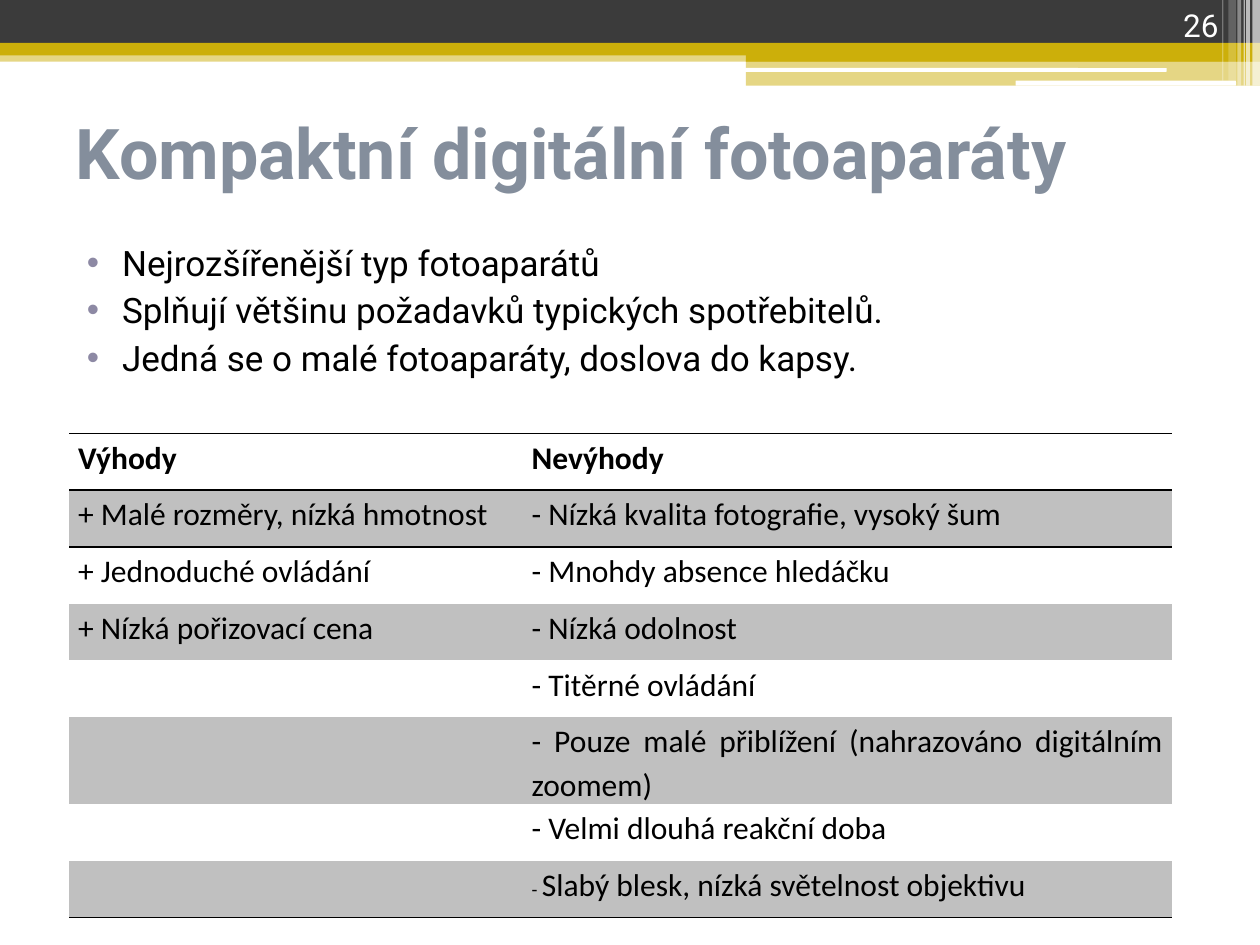
from lxml.etree import SubElement
from pptx import Presentation
from pptx.dml.color import RGBColor
from pptx.enum.shapes import MSO_SHAPE as Shape
from pptx.enum.text import MSO_ANCHOR as Anchor, MSO_AUTO_SIZE as AutoSize, PP_ALIGN as Align
from pptx.oxml import parse_xml
from pptx.oxml.ns import nsdecls, qn
from pptx.util import Inches, Pt

GOLD, DARK, WHITE, BLACK = "CCAF0A", "3B3B3B", "FFFFFF", "000000"
TITLE_GREY, BULLET, STRIPE = "848E9C", "8D89A4", "C0C0C0"
NO_STYLE = "{2D5ABB26-0587-4C30-8999-92F81FD0307C}"

# left, top, width, height, colour, opacity in percent
BANDS = [
    (0, 0.4, 10, 0.09, GOLD, 50),
    (0, 0, 10, 0.34, DARK, 100),
    (0, 0.34, 10, 0.1, GOLD, 100),
    (5.92, 0.39, 4.08, 0.1, GOLD, 100),
    (5.92, 0.48, 4.08, 0.2, GOLD, 50),
]
ROUNDED_BARS = [(5.91, 0.54, 3.35, 0.03), (8.06, 0.64, 1.75, 0.04)]
# left, width, height, opacity of the white stripes in the corner
CORNER_STRIPES = [
    (9.94, 0.06, 0.68, 65),
    (9.89, 0.03, 0.68, 65),
    (9.87, 0.01, 0.68, 60),
    (9.82, 0.03, 0.68, 40),
    (9.75, 0.06, 0.64, 20),
    (9.7, 0.01, 0.64, 30),
]
BULLETS = [
    "Nejrozšířenější typ fotoaparátů",
    "Splňují většinu požadavků typických spotřebitelů.",
    "Jedná se o malé fotoaparáty, doslova do kapsy.",
]
# each cell is a list of (text, size) runs
ROWS = [
    ([("Výhody", 18)], [("Nevýhody", 18)]),
    ([("+ Malé rozměry, nízká hmotnost", 18)], [("- Nízká kvalita fotografie, vysoký šum", 18)]),
    ([("+ Jednoduché ovládání", 18)], [("- Mnohdy absence hledáčku", 18)]),
    ([("+ Nízká pořizovací cena", 18)], [("- Nízká odolnost", 18)]),
    ([], [("- Titěrné ovládání", 18)]),
    ([], [("- Pouze malé přiblížení (nahrazováno digitálním zoomem)", 18)]),
    ([], [("- Velmi dlouhá reakční doba", 18)]),
    ([], [("- ", 11), ("Slabý blesk, nízká světelnost objektivu", 18)]),
]
COLUMN_WIDTHS = [3.6, 5.15]
ROW_HEIGHTS = [0.45] * 5 + [0.69] + [0.45] * 2


def rgb(color):
    return RGBColor.from_string(color)


def add_run(paragraph, text, size, color, font="Roboto", bold=False):
    run = paragraph.add_run()
    run.text = text
    run.font.name = font
    run.font.size = Pt(size)
    run.font.bold = bold
    run.font.color.rgb = rgb(color)


def add_bar(slide, left, top, width, height, color, opacity=100, kind=Shape.RECTANGLE):
    bar = slide.shapes.add_shape(kind, Inches(left), Inches(top), Inches(width), Inches(height))
    bar.shadow.inherit = False
    bar.line.fill.background()
    bar.fill.solid()
    bar.fill.fore_color.rgb = rgb(color)
    if opacity < 100:
        color_element = bar.fill._xPr.find(qn("a:solidFill"))[0]
        SubElement(color_element, qn("a:alpha")).set("val", str(opacity * 1000))


def add_text_box(slide, left, top, width, height, anchor):
    box = slide.shapes.add_textbox(Inches(left), Inches(top), Inches(width), Inches(height))
    box.text_frame.word_wrap = True
    box.text_frame.vertical_anchor = anchor
    return box.text_frame


def set_title(slide, text):
    title = slide.shapes.title
    title.left, title.top = Inches(0.5), Inches(0.62)
    title.width, title.height = Inches(9.34), Inches(1.17)
    title.text_frame.auto_size = AutoSize.NONE
    title.text_frame.vertical_anchor = Anchor.MIDDLE
    paragraph = title.text_frame.paragraphs[0]
    paragraph.alignment = Align.LEFT
    add_run(paragraph, text, 40, TITLE_GREY, bold=True)


def add_bullets(slide, items):
    frame = add_text_box(slide, 0.47, 1.56, 9.19, 1.8, Anchor.MIDDLE)
    for index, item in enumerate(items):
        paragraph = frame.paragraphs[0] if index == 0 else frame.add_paragraph()
        paragraph.space_before = Pt(3)
        properties = paragraph._p.get_or_add_pPr()
        properties.set("marL", str(Inches(0.4)))
        properties.set("indent", str(Inches(-0.28)))
        bullet_color = SubElement(properties, qn("a:buClr"))
        SubElement(bullet_color, qn("a:srgbClr")).set("val", BULLET)
        SubElement(properties, qn("a:buFont")).set("typeface", "Arial")
        SubElement(properties, qn("a:buChar")).set("char", "•")
        add_run(paragraph, item, 20, BLACK)


def add_border(cell, *sides):
    # border lines come before the fill in the cell properties
    for index, side in enumerate(sides):
        line = parse_xml(
            f'<a:{side} {nsdecls("a")} w="{Pt(1)}"><a:solidFill>'
            f'<a:srgbClr val="{BLACK}"/></a:solidFill></a:{side}>'
        )
        cell._tc.get_or_add_tcPr().insert(index, line)


def fill_cell(cell, runs, header, striped):
    cell.margin_left = cell.margin_right = Inches(0.07)
    cell.margin_top = cell.margin_bottom = 0
    if striped:
        cell.fill.solid()
        cell.fill.fore_color.rgb = rgb(STRIPE)
    else:
        cell.fill.background()
    paragraph = cell.text_frame.paragraphs[0]
    paragraph.alignment = Align.JUSTIFY
    paragraph.line_spacing = 1.15
    for text, size in runs:
        add_run(paragraph, text, size, BLACK, "Calibri", header)


def add_comparison_table(slide):
    frame = slide.shapes.add_table(
        len(ROWS), len(COLUMN_WIDTHS), Inches(0.55), Inches(3.44),
        Inches(sum(COLUMN_WIDTHS)), Inches(sum(ROW_HEIGHTS)),
    )
    table = frame.table
    table.first_row = table.horz_banding = False
    table._tbl.tblPr.find(qn("a:tableStyleId")).text = NO_STYLE
    for column, width in zip(table.columns, COLUMN_WIDTHS):
        column.width = Inches(width)
    for row, height in zip(table.rows, ROW_HEIGHTS):
        row.height = Inches(height)
    for row_index, row in enumerate(ROWS):
        for column_index, runs in enumerate(row):
            cell = table.cell(row_index, column_index)
            fill_cell(cell, runs, row_index == 0, row_index % 2 == 1)
            if row_index == 0:
                add_border(cell, "lnT", "lnB")
            elif row_index == 1:
                add_border(cell, "lnT")
            elif row_index == len(ROWS) - 1:
                add_border(cell, "lnB")


def main():
    presentation = Presentation()
    presentation.slide_width, presentation.slide_height = Inches(10), Inches(7.5)
    slide = presentation.slides.add_slide(presentation.slide_layouts[5])

    # Header decoration
    for band in BANDS:
        add_bar(slide, *band)
    for bar in ROUNDED_BARS:
        add_bar(slide, *bar, WHITE, kind=Shape.ROUNDED_RECTANGLE)
    for left, width, height, opacity in CORNER_STRIPES:
        add_bar(slide, left, 0, width, height, WHITE, opacity)

    # Title, bullets and page number
    set_title(slide, "Kompaktní digitální fotoaparáty")
    add_bullets(slide, BULLETS)
    number = add_text_box(slide, 8.94, 0, 0.83, 0.4, Anchor.BOTTOM).paragraphs[0]
    number.alignment = Align.RIGHT
    add_run(number, "26", 18, WHITE)

    # Pros and cons
    add_comparison_table(slide)
    presentation.save("out.pptx")


if __name__ == "__main__":
    main()
